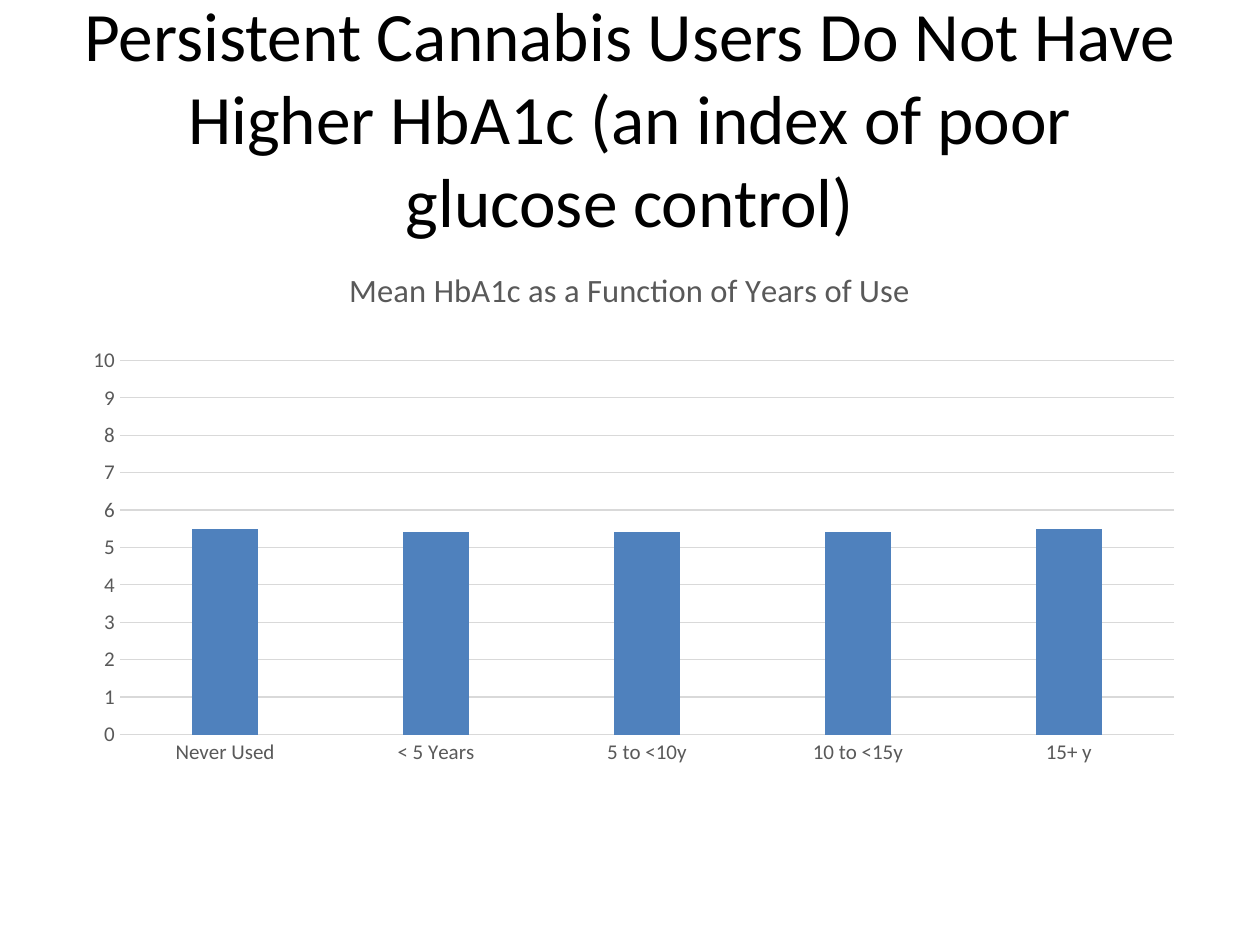
import pptx
import pptx.chart.data
import pptx.dml.color
import pptx.enum.chart
import pptx.enum.text
import pptx.oxml
import pptx.util
from pptx.util import Inches, Pt


def style_font(font, size, color):
    font.name = "Calibri"
    font.size = Pt(size)
    font.bold = False
    font.color.rgb = pptx.dml.color.RGBColor.from_string(color)


def manual_layout(**settings):
    """Return a c:layout element that fixes a chart part in chart fractions."""
    parts = "".join(f'<c:{name} val="{value}"/>' for name, value in settings.items())
    return pptx.oxml.parse_xml(
        '<c:layout xmlns:c="http://schemas.openxmlformats.org/drawingml/2006/chart">'
        f"<c:manualLayout>{parts}</c:manualLayout></c:layout>"
    )


deck = pptx.Presentation()
deck.slide_width = Inches(10)
deck.slide_height = Inches(7.5)
page = deck.slides.add_slide(deck.slide_layouts[6])

# Heading
heading = page.shapes.add_textbox(Inches(0.5), Inches(0.3), Inches(9), Inches(1.25))
frame = heading.text_frame
frame.word_wrap = True
frame.vertical_anchor = pptx.enum.text.MSO_ANCHOR.MIDDLE
frame.text = (
    "Persistent Cannabis Users Do Not Have Higher HbA1c "
    "(an index of poor glucose control)"
)
para = frame.paragraphs[0]
para.alignment = pptx.enum.text.PP_ALIGN.CENTER
style_font(para.runs[0].font, 39.6, "000000")

# Column chart
data = pptx.chart.data.CategoryChartData()
data.categories = ["Never Used", "< 5 Years", "5 to <10y", "10 to <15y", "15+ y"]
data.add_series("Series 1", [5.5, 5.4, 5.4, 5.4, 5.5])
chart = page.shapes.add_chart(
    pptx.enum.chart.XL_CHART_TYPE.COLUMN_CLUSTERED,
    Inches(0.5), Inches(1.92), Inches(9), Inches(4.95), data,
).chart
style_font(chart.font, 10, "000000")
chart.has_legend = False

chart_title = chart.chart_title
chart_title.text_frame.text = "Mean HbA1c as a Function of Years of Use"
style_font(chart_title.text_frame.paragraphs[0].runs[0].font, 18.6, "595959")
chart_title.include_in_layout = False
chart_title._element.tx.addnext(
    manual_layout(xMode="edge", yMode="edge", x=0.25, y=0.04)
)

plot = chart.plots[0]
plot.gap_width = 219
plot.overlap = -27
plot.vary_by_categories = False
columns = plot.series[0].format.fill
columns.solid()
columns.fore_color.rgb = pptx.dml.color.RGBColor.from_string("4F81BD")

plot_area = chart._chartSpace.chart.plotArea
for old_layout in plot_area.xpath("c:layout"):
    plot_area.remove(old_layout)
plot_area.insert(0, manual_layout(
    layoutTarget="inner", xMode="edge", yMode="edge", x=0.05, y=0.19, w=0.93, h=0.6,
))

# Axes
category_axis, value_axis = chart.category_axis, chart.value_axis
for axis in (category_axis, value_axis):
    axis.major_tick_mark = pptx.enum.chart.XL_TICK_MARK.NONE
    axis.minor_tick_mark = pptx.enum.chart.XL_TICK_MARK.NONE
    style_font(axis.tick_labels.font, 12, "595959")
value_axis.minimum_scale = 0
value_axis.maximum_scale = 10
value_axis.major_unit = 1
value_axis.tick_labels.number_format = "General"
value_axis.tick_labels.number_format_is_linked = False
value_axis.format.line.fill.background()
for line in (category_axis.format.line, value_axis.major_gridlines.format.line):
    line.width = Pt(0.75)
    line.color.rgb = pptx.dml.color.RGBColor.from_string("D9D9D9")

deck.save("out.pptx")
